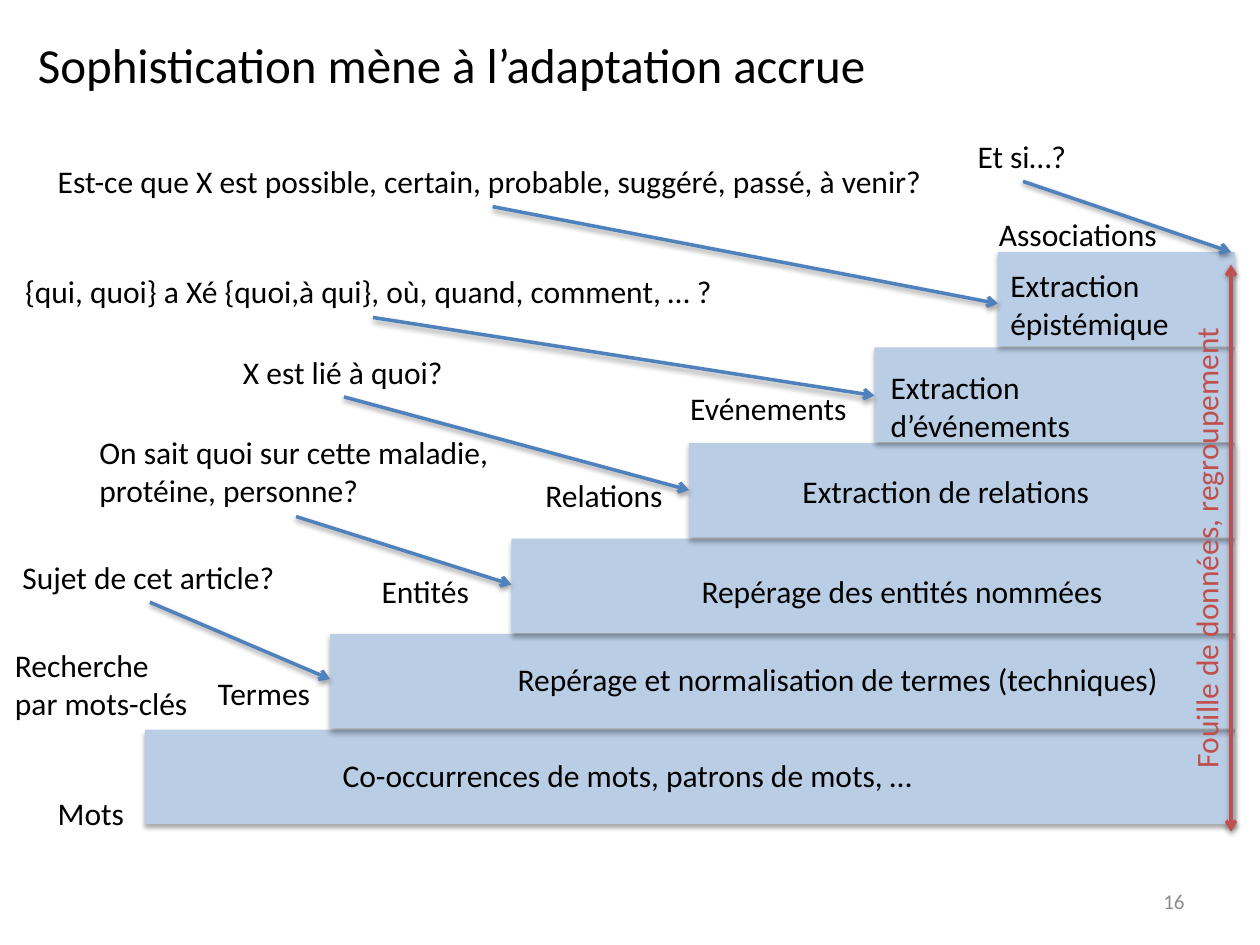
"""Build a slide showing the staircase of text-mining techniques and the questions they answer."""
from dataclasses import dataclass

from lxml.etree import SubElement
from pptx import Presentation
from pptx.dml.color import RGBColor
from pptx.enum.shapes import MSO_CONNECTOR as Connector, MSO_SHAPE as Shape
from pptx.enum.text import MSO_ANCHOR as Anchor, MSO_AUTO_SIZE as AutoSize, PP_ALIGN as Align
from pptx.oxml.ns import qn
from pptx.util import Inches, Pt


@dataclass(frozen=True)
class Theme:
    font: str = "Calibri"
    ink: RGBColor = RGBColor.from_string("000000")
    muted: RGBColor = RGBColor.from_string("8C8C8C")
    step: RGBColor = RGBColor.from_string("B9CDE5")
    arrow: RGBColor = RGBColor.from_string("4F81BD")
    mining: RGBColor = RGBColor.from_string("C0504D")
    title_size: Pt = Pt(28)
    body_size: Pt = Pt(18)
    number_size: Pt = Pt(12)
    line_width: Pt = Pt(2)


theme = Theme()


def write(box, text, size=theme.body_size, color=theme.ink, align=Align.LEFT, wrap=False):
    frame = box.text_frame
    frame.word_wrap = wrap
    frame.auto_size = AutoSize.SHAPE_TO_FIT_TEXT
    for index, line in enumerate(text.split("\n")):
        paragraph = frame.add_paragraph() if index else frame.paragraphs[0]
        paragraph.alignment = align
        run = paragraph.add_run()
        run.text = line
        run.font.name = theme.font
        run.font.size = size
        run.font.color.rgb = color
    return frame


def cast_shadow(properties, distance, opacity):
    effects = SubElement(properties, qn("a:effectLst"))
    shadow = SubElement(effects, qn("a:outerShdw"), blurRad=str(Pt(3.1)), dist=str(Pt(distance)),
                        dir="5400000", rotWithShape="0")
    black = SubElement(shadow, qn("a:srgbClr"), val="000000")
    SubElement(black, qn("a:alpha"), val=str(opacity * 1000))


deck = Presentation()
deck.slide_width, deck.slide_height = Inches(10), Inches(7.5)
slide = deck.slides.add_slide(deck.slide_layouts[5])
shapes = slide.shapes

title = shapes.title
title.left, title.top, title.width, title.height = map(Inches, (0.2, 0.22, 6.92, 0.57))
write(title, "Sophistication mène à l’adaptation accrue", theme.title_size).vertical_anchor = Anchor.TOP

page_number = shapes.add_textbox(Inches(7.17), Inches(6.95), Inches(2.33), Inches(0.4))
number_frame = write(page_number, "16", theme.number_size, theme.muted, Align.RIGHT, True)
number_frame.vertical_anchor = Anchor.MIDDLE
number_frame.auto_size = AutoSize.NONE

stairs_right, stairs_top, last_top, step_height = 9.8, 2, 5.79, 0.75
step_lefts = [7.92, 6.94, 5.47, 4.06, 2.62, 1.15]
step_pitch = (last_top - stairs_top) / (len(step_lefts) - 1)
for level, left in reversed(list(enumerate(step_lefts))):
    step = shapes.add_shape(Shape.RECTANGLE, Inches(left), Inches(stairs_top + level * step_pitch),
                            Inches(stairs_right - left), Inches(step_height))
    step.fill.solid()
    step.fill.fore_color.rgb = theme.step
    step.line.fill.background()
    cast_shadow(step.element.spPr, 1.8, 35)

labels = [
    ("Mots", 0.36, 6.25, 0.73),
    ("Termes", 1.63, 5.3, 0.96),
    ("Entités", 2.93, 4.49, 0.91),
    ("Relations", 4.23, 3.73, 1.15),
    ("Evénements", 5.38, 3.04, 1.47),
    ("Associations", 7.83, 1.66, 1.47),
    ("Co-occurrences de mots, patrons de mots, …", 2.62, 5.95, 4.78),
    ("Repérage et normalisation de termes (techniques)", 4.01, 5.19, 5.36),
    ("Repérage des entités nommées", 5.47, 4.49, 3.43),
    ("Extraction de relations", 6.27, 3.7, 2.52),
    ("Extraction\nd’événements", 6.97, 2.87, 1.66),
    ("Extraction\népistémique", 7.92, 2.06, 1.48),
    ("Recherche\npar mots-clés", 0.02, 5.08, 1.59),
    ("Sujet de cet article?", 0.08, 4.38, 2.22),
    ("On sait quoi sur cette maladie,\nprotéine, personne?", 0.69, 3.39, 3.32),
    ("X est lié à quoi?", 1.83, 2.75, 1.81),
    ("{qui, quoi} a Xé {quoi,à qui}, où, quand, comment, … ?", 0.1, 2.11, 5.72),
    ("Est-ce que X est possible, certain, probable, suggéré, passé, à venir?", 0.36, 1.24, 7.1),
    ("Et si…?", 7.66, 1.04, 0.91),
]
for text, left, top, width in labels:
    height = 0.71 if "\n" in text else 0.4
    write(shapes.add_textbox(Inches(left), Inches(top), Inches(width), Inches(height)), text)

mining = shapes.add_textbox(Inches(7.32), Inches(4.15), Inches(4.5), Inches(0.4))
mining.rotation = 270
write(mining, "Fouille de données, regroupement", color=theme.mining, align=Align.CENTER, wrap=True)

arrows = [
    ((9.77, 2.1), (9.77, 6.6), theme.mining, ("headEnd", "tailEnd")),
    ((3.91, 1.64), (7.92, 2.41), theme.arrow, ("tailEnd",)),
    ((2.96, 2.52), (6.94, 3.14), theme.arrow, ("tailEnd",)),
    ((2.73, 3.15), (5.47, 3.89), theme.arrow, ("tailEnd",)),
    ((2.35, 4.1), (4.06, 4.64), theme.arrow, ("tailEnd",)),
    ((1.19, 4.78), (2.62, 5.39), theme.arrow, ("tailEnd",)),
    ((8.12, 1.44), (9.77, 2), theme.arrow, ("tailEnd",)),
]
for start, end, color, tips in arrows:
    arrow = shapes.add_connector(Connector.STRAIGHT, *map(Inches, start + end))
    arrow.line.color.rgb = color
    arrow.line.width = theme.line_width
    properties = arrow.element.spPr
    for tip in tips:
        SubElement(properties.find(qn("a:ln")), qn(f"a:{tip}"), type="arrow")
    cast_shadow(properties, 1.6, 38)

deck.save("out.pptx")
